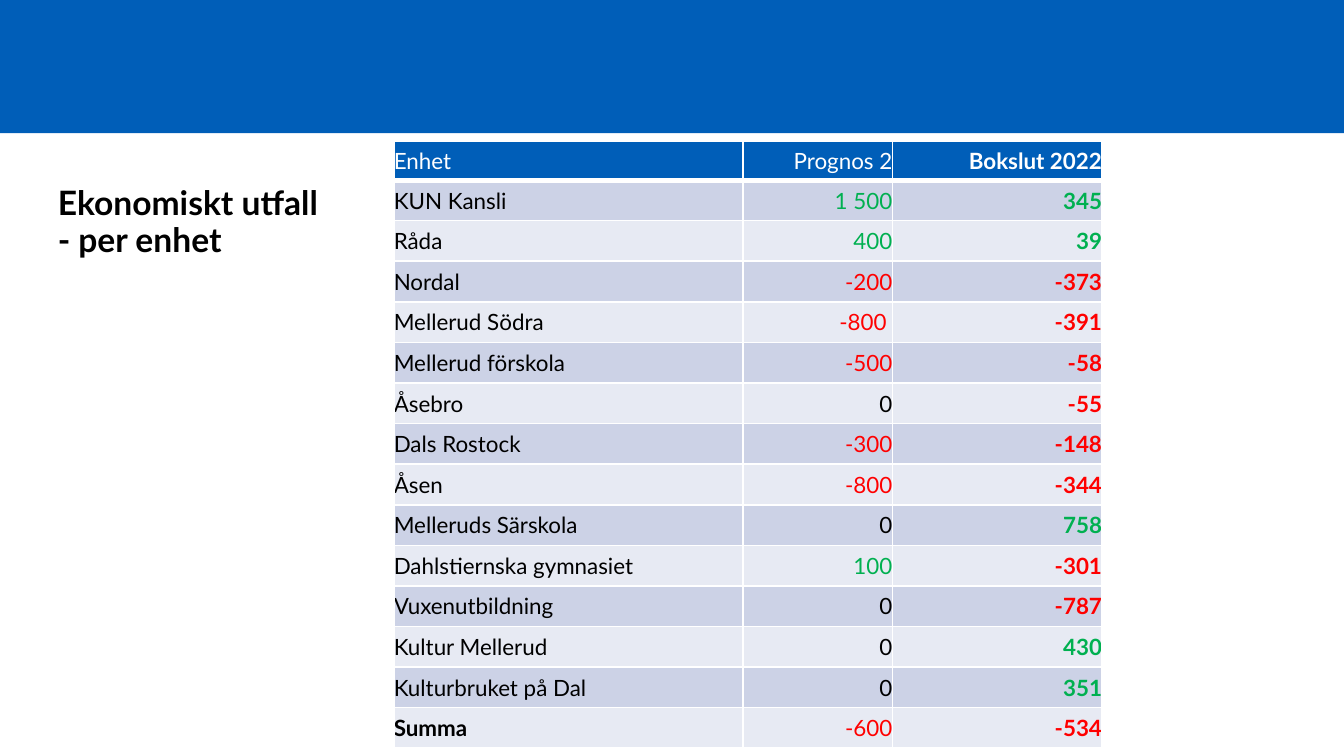
from typing import NamedTuple

from lxml import etree
from pptx import Presentation
from pptx.dml.color import RGBColor
from pptx.enum.shapes import MSO_SHAPE
from pptx.enum.text import MSO_ANCHOR, MSO_AUTO_SIZE, PP_ALIGN
from pptx.oxml.ns import qn
from pptx.util import Inches, Pt

RECTANGLE = MSO_SHAPE.RECTANGLE
MIDDLE, BOTTOM = MSO_ANCHOR.MIDDLE, MSO_ANCHOR.BOTTOM
LEFT, RIGHT = PP_ALIGN.LEFT, PP_ALIGN.RIGHT
NO_AUTOFIT = MSO_AUTO_SIZE.NONE

BLUE = RGBColor(0x00, 0x5E, 0xB8)
WHITE = RGBColor(0xFF, 0xFF, 0xFF)
BLACK = RGBColor(0x00, 0x00, 0x00)
GREEN = RGBColor(0x00, 0xB0, 0x50)
RED = RGBColor(0xFF, 0x00, 0x00)
BANDS = (RGBColor(0xCC, 0xD2, 0xE6), RGBColor(0xE7, 0xEA, 0xF3))

FONT = "Lato"
THIN, THICK = 1, 3
PAGE_WIDTH = 10
PAGE_HEIGHT = PAGE_WIDTH * 9 / 16
COLUMN_WIDTHS = (2.6, 1.11, 1.56)
TABLE_HEIGHT, HEADER_HEIGHT = 4.52, 0.29


class Unit(NamedTuple):
    name: str
    forecast: str
    result: str


HEADER = Unit("Enhet", "Prognos 2", "Bokslut 2022")
UNITS = (
    Unit("KUN Kansli", "1 500", "345"),
    Unit("Råda", "400", "39"),
    Unit("Nordal", "-200", "-373"),
    Unit("Mellerud Södra", "-800 ", "-391"),
    Unit("Mellerud förskola", "-500", "-58"),
    Unit("Åsebro", "0", "-55"),
    Unit("Dals Rostock", "-300", "-148"),
    Unit("Åsen", "-800", "-344"),
    Unit("Melleruds Särskola", "0", "758"),
    Unit("Dahlstiernska gymnasiet", "100", "-301"),
    Unit("Vuxenutbildning ", "0", "-787"),
    Unit("Kultur Mellerud", "0", "430"),
    Unit("Kulturbruket på Dal", "0", "351"),
    Unit("Summa", "-600", "-534"),
)


def add_span(para, text: str, size: float, color: RGBColor, bold: bool) -> None:
    span = para.add_run()
    span.text = text
    span.font.name = FONT
    span.font.size = Pt(size)
    span.font.bold = bold
    span.font.color.rgb = color


def amount_color(amount: str) -> RGBColor:
    if amount == "0":
        return BLACK
    return RED if amount.startswith("-") else GREEN


def add_border(cell, side: str, width: float) -> None:
    line = etree.SubElement(cell._tc.get_or_add_tcPr(), qn(f"a:{side}"), w=str(Pt(width)))
    fill = etree.SubElement(line, qn("a:solidFill"))
    etree.SubElement(fill, qn("a:srgbClr"), val=str(WHITE))


def fill_row(table, row: int, unit: Unit) -> None:
    is_header = row == 0
    is_total = row == len(UNITS)
    for column, text in enumerate(unit):
        cell = table.cell(row, column)
        cell.margin_left = cell.margin_right = cell.margin_top = cell.margin_bottom = 0
        cell.vertical_anchor = MIDDLE

        # Borders go before the fill in the cell properties
        add_border(cell, "lnL", THIN)
        add_border(cell, "lnR", THIN)
        add_border(cell, "lnT", THICK if row == 1 else THIN)
        add_border(cell, "lnB", THICK if is_header else THIN)
        cell.fill.solid()
        cell.fill.fore_color.rgb = BLUE if is_header else BANDS[(row - 1) % 2]

        if is_header:
            color = WHITE
        else:
            color = BLACK if column == 0 else amount_color(text)
        para = cell.text_frame.paragraphs[0]
        para.alignment = LEFT if column == 0 else RIGHT
        add_span(para, text, 12, color, column == 2 or (is_total and column == 0))


def add_banner(page) -> None:
    banner = page.shapes.add_shape(RECTANGLE, 0, 0, Inches(PAGE_WIDTH), Inches(0.99))
    banner.shadow.inherit = False
    banner.fill.solid()
    banner.fill.fore_color.rgb = BLUE
    banner.line.fill.background()


def format_title(title) -> None:
    title.left, title.top = Inches(0.33), Inches(1.32)
    title.width, title.height = Inches(2.44), Inches(0.66)
    frame = title.text_frame
    frame.word_wrap = True
    frame.auto_size = NO_AUTOFIT
    frame.vertical_anchor = BOTTOM
    para = frame.paragraphs[0]
    para.alignment = LEFT
    para.line_spacing = 0.9
    add_span(para, "Ekonomiskt utfall", 18, BLACK, True)
    para.add_line_break()
    add_span(para, "- per enhet", 18, BLACK, True)


def add_unit_table(page) -> None:
    table = page.shapes.add_table(
        len(UNITS) + 1, len(COLUMN_WIDTHS), Inches(2.93), Inches(1.05),
        Inches(sum(COLUMN_WIDTHS)), Inches(TABLE_HEIGHT),
    ).table
    for column, width in zip(table.columns, COLUMN_WIDTHS):
        column.width = Inches(width)
    unit_height = (TABLE_HEIGHT - HEADER_HEIGHT) / len(UNITS)
    for row, unit in enumerate((HEADER, *UNITS)):
        table.rows[row].height = Inches(unit_height if row else HEADER_HEIGHT)
        fill_row(table, row, unit)


def main() -> None:
    deck = Presentation()
    deck.slide_width, deck.slide_height = Inches(PAGE_WIDTH), Inches(PAGE_HEIGHT)
    page = deck.slides.add_slide(deck.slide_layouts[5])
    add_banner(page)
    format_title(page.shapes.title)
    add_unit_table(page)
    deck.save("out.pptx")


if __name__ == "__main__":
    main()
